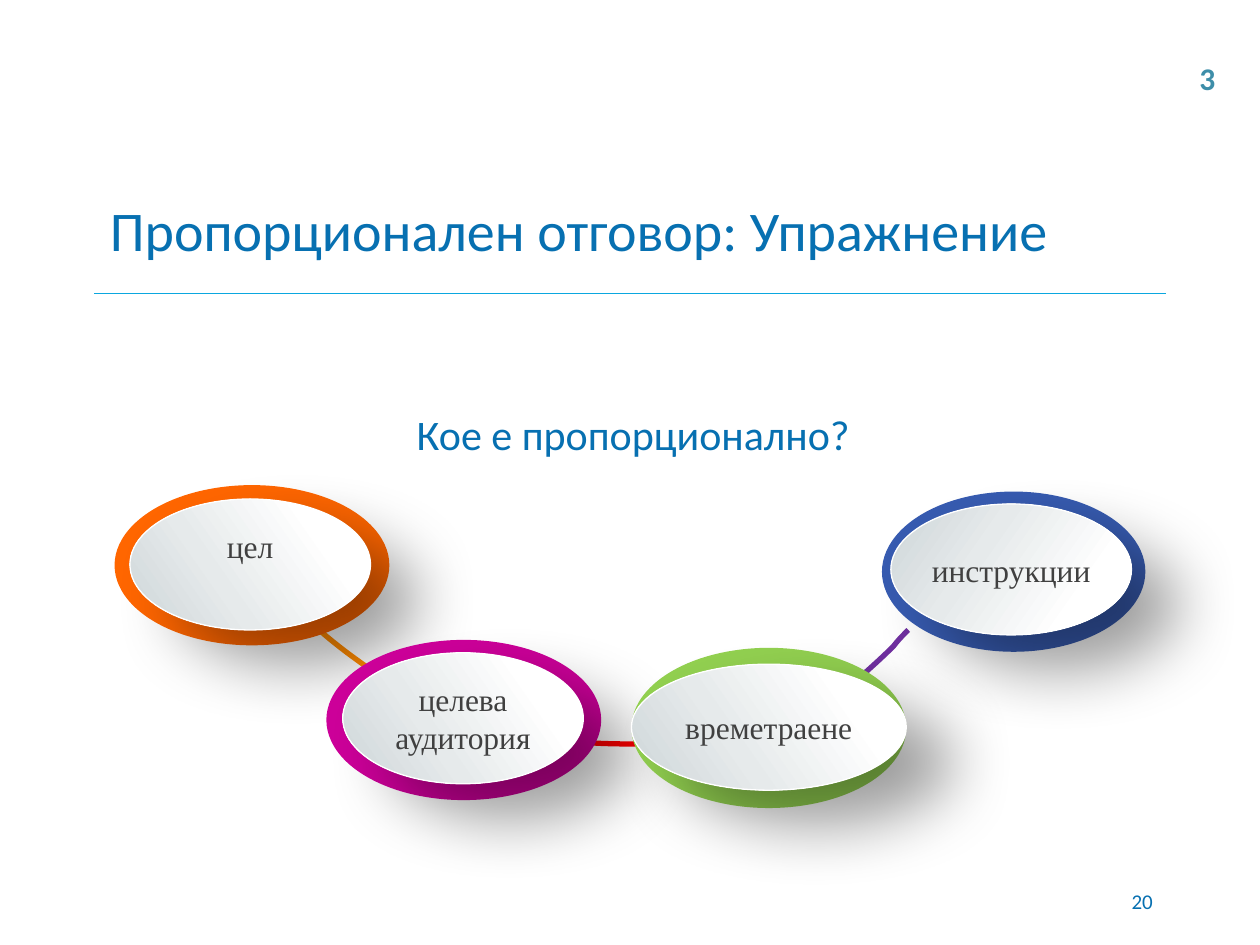
"""Build the proportional response exercise slide."""
import pptx
import pptx.dml.color
import pptx.enum.shapes
import pptx.enum.text
import pptx.oxml
import pptx.oxml.ns
import pptx.util

Cm, Pt = pptx.util.Cm, pptx.util.Pt
RGBColor = pptx.dml.color.RGBColor
ALIGN = pptx.enum.text.PP_ALIGN
ANCHOR = pptx.enum.text.MSO_ANCHOR
AUTO = pptx.enum.text.MSO_AUTO_SIZE

BLUE = RGBColor(0x07, 0x70, 0xB1)
CYAN = RGBColor(0x0B, 0xA7, 0xDF)
TEAL = RGBColor(0x3E, 0x8E, 0xA9)
DARK = RGBColor(0x40, 0x40, 0x40)
WHITE = RGBColor(0xFF, 0xFF, 0xFF)
SILVER = RGBColor(0xE6, 0xEA, 0xEB)
GREY = RGBColor(0xCD, 0xD5, 0xD8)
BLACK = RGBColor(0x00, 0x00, 0x00)
NAVY = RGBColor(0x37, 0x5B, 0xB0)
ORANGE = RGBColor(0xFF, 0x66, 0x00)
MAGENTA = RGBColor(0xCC, 0x00, 0x99)
GREEN = RGBColor(0x92, 0xD0, 0x50)
PURPLE = RGBColor(0x70, 0x30, 0xA0)
RED = RGBColor(0xFF, 0x00, 0x00)
AMBER = RGBColor(0xFF, 0x8A, 0x00)

NS = pptx.oxml.ns.nsdecls("a")
RISING = [(0, GREY), (37, SILVER), (77, WHITE), (100, WHITE)]
FALLING = [(0, WHITE), (23, WHITE), (63, SILVER), (100, GREY)]


def set_all(obj, values):
    """Set every attribute in values on obj."""
    for name, value in values.items():
        setattr(obj, name, value)


def write(s, text, color, font, para=None, frame=None):
    """Put one formatted paragraph in a shape."""
    tf = s.text_frame
    set_all(tf, {"word_wrap": True, "auto_size": AUTO.NONE, **(frame or {})})
    p = tf.paragraphs[0]
    set_all(p, para or {})
    r = p.add_run()
    r.text = text
    set_all(r.font, font)
    r.font.color.rgb = color


def add_text(slide, box, *args, **kwargs):
    """Add a text box at a position in centimetres."""
    write(slide.shapes.add_textbox(*map(Cm, box)), *args, **kwargs)


def add_rule(slide, x1, x2, y):
    """Add the horizontal rule under the title."""
    s = slide.shapes.add_connector(
        pptx.enum.shapes.MSO_CONNECTOR.STRAIGHT, Cm(x1), Cm(y), Cm(x2), Cm(y))
    s.line.color.rgb, s.line.width = CYAN, Pt(0.75)
    s._element.spPr.append(pptx.oxml.parse_xml(f"<a:effectLst {NS}/>"))


def bezier(a, b, c, d, steps=12):
    """Return points along a cubic curve, after its start."""
    return [tuple(Cm((1 - t) ** 3 * i + 3 * (1 - t) ** 2 * t * j
                     + 3 * (1 - t) * t ** 2 * k + t ** 3 * m)
                  for i, j, k, m in zip(a, b, c, d))
            for t in (n / steps for n in range(1, steps + 1))]


def add_curve(slide, color, points):
    """Add an open curve through chained cubic segments."""
    builder = slide.shapes.build_freeform(*map(Cm, points[0]))
    for i in range(0, len(points) - 1, 3):
        builder.add_line_segments(bezier(*points[i:i + 4]), close=False)
    s = builder.convert_to_shape()
    s.shadow.inherit = False
    s.fill.background()
    s.line.color.rgb, s.line.width = color, Pt(3)


def add_ellipse(slide, box):
    """Add an ellipse with no inherited shadow."""
    s = slide.shapes.add_shape(
        pptx.enum.shapes.MSO_SHAPE.OVAL, *map(Cm, box))
    s.shadow.inherit = False
    return s


def add_gloss(s, stops, angle):
    """Give a shape a gradient fill and a soft outer shadow."""
    qn, spPr = pptx.oxml.ns.qn, s._element.spPr
    gs = "".join(f'<a:gs pos="{pos * 1000}"><a:srgbClr val="{color}"/></a:gs>'
                 for pos, color in stops)
    s.fill.gradient()
    spPr.replace(spPr.find(qn("a:gradFill")), pptx.oxml.parse_xml(
        f'<a:gradFill {NS} rotWithShape="1"><a:gsLst>{gs}</a:gsLst>'
        f'<a:lin ang="{angle * 60000}" scaled="0"/></a:gradFill>'))
    spPr.find(qn("a:effectLst")).append(pptx.oxml.parse_xml(
        f'<a:outerShdw {NS} blurRad="{Pt(38)}" dist="{Pt(33)}" '
        f'dir="2202000" algn="ctr" rotWithShape="0"><a:srgbClr val="{BLACK}">'
        '<a:alpha val="39000"/></a:srgbClr></a:outerShdw>'))


def add_bubble(slide, text, color, outer, inner, stops=FALLING, angle=145,
               bottom=0):
    """Add a coloured ring with a glossy labelled ellipse on it."""
    ring = add_ellipse(slide, outer)
    ring.fill.solid()
    ring.fill.fore_color.rgb = color
    ring.line.fill.background()
    s = add_ellipse(slide, inner)
    add_gloss(s, stops, angle)
    s.line.color.rgb, s.line.width = WHITE, Pt(0.75)
    write(s, text, DARK, {"name": "Times New Roman", "size": Pt(18)},
          {"alignment": ALIGN.CENTER},
          {"margin_left": 0, "margin_right": 0, "margin_top": 0,
           "margin_bottom": Pt(bottom), "vertical_anchor": ANCHOR.MIDDLE})


def add_title(slide, text):
    """Move and fill the title placeholder."""
    s = slide.shapes.title
    set_all(s, {"left": Cm(1.96), "top": Cm(3.53),
                "width": Cm(21.59), "height": Cm(2.18)})
    write(s, text, BLUE, {"name": "Calibri", "size": Pt(32)},
          {"alignment": ALIGN.LEFT}, {"vertical_anchor": ANCHOR.MIDDLE})


def main():
    """Build and save the slide."""
    prs = pptx.Presentation()
    set_all(prs, {"slide_width": Cm(25.4), "slide_height": Cm(19.05)})
    slide = prs.slides.add_slide(prs.slide_layouts[5])

    add_rule(slide, 1.9, 23.5, 5.92)
    add_title(slide, "Пропорционален отговор: Упражнение")
    add_text(slide, (18.21, 17.65, 5.28, 1.02), "20", BLUE,
             {"name": "Calibri", "size": Pt(12)},
             {"alignment": ALIGN.RIGHT}, {"vertical_anchor": ANCHOR.MIDDLE})

    add_curve(slide, PURPLE, [
        (18.31, 12.7), (18.21, 12.8), (18.11, 12.9), (18.01, 13.03),
        (17.68, 13.36), (17.32, 13.67), (16.97, 13.97)])
    add_curve(slide, PURPLE, [
        (16.97, 13.94), (16.51, 14.25), (16.03, 14.5), (15.49, 14.71)])
    add_bubble(slide, "инструкции", NAVY, (17.78, 9.91, 5.31, 3.23),
               (17.96, 10.16, 4.85, 2.64), RISING, 35)
    add_curve(slide, RED, [
        (11.4, 14.94), (11.96, 14.99), (12.52, 15.01), (13.08, 14.99),
        (13.36, 14.96), (13.64, 14.94), (13.92, 14.88)])
    add_curve(slide, AMBER, [
        (6.27, 12.55), (6.81, 13.06), (7.47, 13.51), (8.18, 13.97)])
    add_bubble(slide, "цел", ORANGE, (2.31, 9.78, 5.54, 3.23),
               (2.62, 10.06, 4.85, 2.64), bottom=21)
    add_bubble(slide, "целева аудитория", MAGENTA, (6.58, 12.9, 5.54, 3.23),
               (6.91, 13.16, 4.85, 2.64))
    add_bubble(slide, "времетраене", GREEN, (12.73, 13.06, 5.54, 3.23),
               (12.73, 13.39, 5.54, 2.54))

    add_text(slide, (6.58, 7.95, 12.37, 1.37), "Кое е пропорционално?", BLUE,
             {"name": "Calibri", "size": Pt(24)},
             {"alignment": ALIGN.CENTER, "line_spacing": 1.15,
              "space_after": Pt(6)})
    add_text(slide, (23.93, 1.07, 0.84, 1.02), "3", TEAL,
             {"name": "Calibri", "size": Pt(18), "bold": True},
             frame={"word_wrap": False})
    prs.save("out.pptx")


if __name__ == "__main__":
    main()
